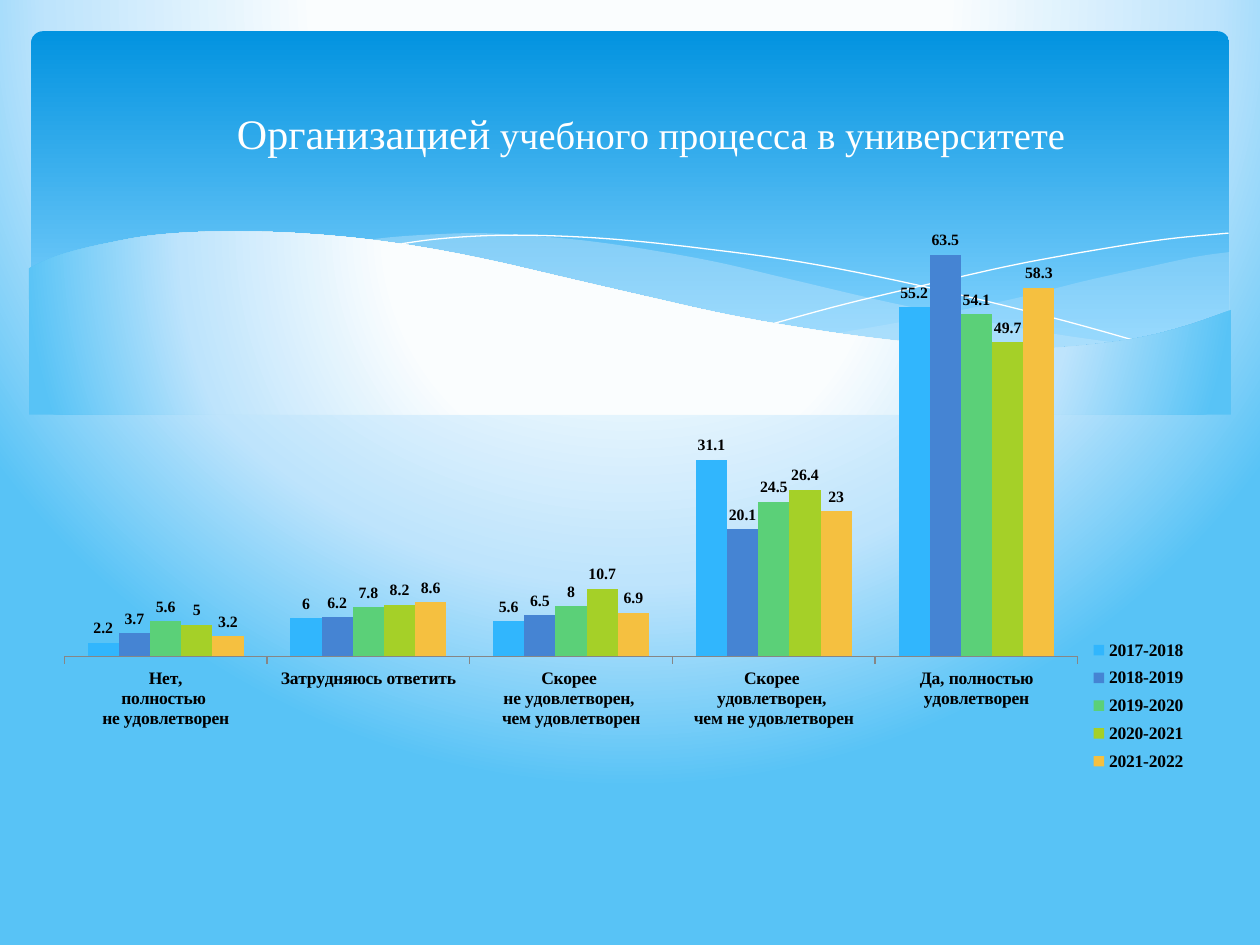
from dataclasses import dataclass
from typing import Optional

import pptx
import pptx.chart.data
import pptx.dml.color
import pptx.enum.chart
import pptx.enum.shapes
import pptx.enum.text
import pptx.oxml
import pptx.oxml.ns
import pptx.util

Cm = pptx.util.Cm
Pt = pptx.util.Pt
qn = pptx.oxml.ns.qn
RGB = pptx.dml.color.RGBColor.from_string


@dataclass(frozen=True)
class Theme:
    face: str = "Times New Roman"
    base: str = "Cabin"
    white: str = "FFFFFF"
    black: str = "000000"
    axis: str = "868686"
    mist: str = "C6E7FC"
    band: tuple = ((0, "0293E0"), (90, "83D3FE"))
    sky: tuple = ((40, "FAFDFE"), (74, "BEE4FC"), (100, "58C3F6"))
    lead: int = 24
    rest: int = 22
    text: int = 10
    label: int = 9


@dataclass(frozen=True)
class Wave:
    curves: list
    alpha: Optional[int] = None
    line: bool = False


@dataclass(frozen=True)
class Year:
    name: str
    color: str
    vals: tuple


THEME = Theme()
LINEAR = '<a:lin ang="5400000" scaled="0"/>'
RADIAL = ('<a:path path="circle"><a:fillToRect l="20000" t="-40000" '
          'r="20000" b="140000"/></a:path>')

WAVES = [
    Wave([[(976, 200), (948, 204), (906, 213), (861, 223), (805, 237), (729, 253), (661, 265)],
          [(661, 265), (705, 271), (757, 276), (803, 278), (854, 276), (897, 270),
           (942, 259), (976, 247)]], alpha=29),
    Wave([[(893, 273), (837, 265), (775, 254), (706, 240), (629, 222), (569, 208), (514, 198),
           (465, 191), (420, 187), (380, 185), (344, 186), (313, 188), (286, 191)],
          [(286, 191), (342, 199), (404, 211), (449, 222), (530, 240), (601, 255), (665, 266),
           (722, 274), (773, 277), (818, 278), (857, 277), (893, 273)]], alpha=40),
    Wave([[(309, 195), (344, 190), (387, 187), (433, 187), (489, 190), (556, 197), (636, 208),
           (727, 226), (831, 251), (907, 272)]], line=True),
    Wave([[(613, 257), (672, 241), (748, 223), (806, 210), (866, 199), (924, 190),
           (975, 185)]], line=True),
    Wave([[(977, 246), (940, 259), (899, 269), (850, 275), (809, 277), (761, 275), (708, 270),
           (648, 262), (579, 250), (503, 233), (447, 220), (391, 207), (340, 197), (292, 190),
           (250, 186), (211, 184), (161, 184), (119, 187), (85, 193), (59, 199), (40, 205),
           (23, 213)],
          [(23, 213), (23, 329)], [(23, 329), (977, 329)], [(977, 329), (977, 246)]]),
]

CATS = ["Нет,\nполностью \nне удовлетворен", "Затрудняюсь ответить",
        "Скорее \nне удовлетворен, \nчем удовлетворен",
        "Скорее \nудовлетворен, \nчем не удовлетворен", "Да, полностью удовлетворен"]
YEARS = [
    Year("2017-2018", "31B6FD", (2.2, 6, 5.6, 31.1, 55.2)),
    Year("2018-2019", "4584D3", (3.7, 6.2, 6.5, 20.1, 63.5)),
    Year("2019-2020", "5BD078", (5.6, 7.8, 8, 24.5, 54.1)),
    Year("2020-2021", "A5D028", (5, 8.2, 10.7, 26.4, 49.7)),
    Year("2021-2022", "F5C040", (3.2, 8.6, 6.9, 23, 58.3)),
]


def shade(fill, props, stops: tuple, kind: str) -> None:
    fill.gradient()
    marks = "".join(f'<a:gs pos="{pos * 1000}"><a:srgbClr val="{tint}"/></a:gs>'
                    for pos, tint in stops)
    grad = pptx.oxml.parse_xml(
        f'<a:gradFill {pptx.oxml.ns.nsdecls("a")} rotWithShape="1">'
        f'<a:gsLst>{marks}</a:gsLst>{kind}</a:gradFill>')
    props.replace(props.find(qn("a:gradFill")), grad)


def smooth(knots: list, steps: int = 6) -> list:
    ends = [knots[0], *knots, knots[-1]]
    dots = [knots[0]]
    for a, b, c, d in zip(ends, ends[1:], ends[2:], ends[3:]):
        for step in range(1, steps + 1):
            t = step / steps
            dots.append(tuple(
                q + t * (r - p) / 2 + t * t * (2 * p - 5 * q + 4 * r - s) / 2
                + t ** 3 * (3 * q - p - 3 * r + s) / 2
                for p, q, r, s in zip(a, b, c, d)))
    return dots


def draw_wave(slide, wave: Wave) -> None:
    dots = [(Cm(x * 0.0254), Cm(y * 0.0254))
            for curve in wave.curves for x, y in smooth(curve)]
    pen = slide.shapes.build_freeform(*dots[0])
    pen.add_line_segments(dots[1:], close=not wave.line)
    shape = pen.convert_to_shape()
    shape.shadow.inherit = False
    if wave.line:
        shape.fill.background()
        shape.line.color.rgb = RGB(THEME.white)
        shape.line.width = Pt(0)
        return
    shape.line.fill.background()
    if wave.alpha is None:
        shade(shape.fill, shape.element.spPr, THEME.sky, RADIAL)
        return
    shape.fill.solid()
    shape.fill.fore_color.rgb = RGB(THEME.mist)
    tint = shape.element.spPr.find(qn("a:solidFill"))[0]
    tint.makeelement(qn("a:alpha"), {})
    alpha = pptx.oxml.parse_xml(
        f'<a:alpha {pptx.oxml.ns.nsdecls("a")} val="{wave.alpha * 1000}"/>')
    tint.append(alpha)


def draw_band(slide) -> None:
    band = slide.shapes.add_shape(pptx.enum.shapes.MSO_SHAPE.ROUNDED_RECTANGLE,
                                  Cm(0.63), Cm(0.63), Cm(24.15), Cm(6.86))
    band.adjustments[0] = 0.034
    band.shadow.inherit = False
    band.line.fill.background()
    shade(band.fill, band.element.spPr, THEME.band, LINEAR)


def draw_title(slide) -> None:
    title = slide.shapes.title
    slide.shapes.element.append(title.element)
    title.left, title.top, title.width, title.height = Cm(1.27), Cm(0.94), Cm(22.86), Cm(3.48)
    frame = title.text_frame
    frame.word_wrap = True
    frame.auto_size = pptx.enum.text.MSO_AUTO_SIZE.NONE
    frame.vertical_anchor = pptx.enum.text.MSO_ANCHOR.MIDDLE
    frame.margin_left = Cm(1.1)
    para = frame.paragraphs[0]
    para.alignment = pptx.enum.text.PP_ALIGN.CENTER
    for text, size in (("Организацией", THEME.lead),
                       (" учебного процесса в университете", THEME.rest)):
        run = para.add_run()
        run.text = text
        run.font.name = THEME.face
        run.font.size = Pt(size)
        run.font.color.rgb = RGB(THEME.white)


def set_font(font, size: int, face: str, bold: bool) -> None:
    font.name, font.size, font.bold = face, Pt(size), bold
    font.color.rgb = RGB(THEME.black)


def layout(box: tuple, inner: bool = False):
    target = '<c:layoutTarget val="inner"/>' if inner else ""
    modes = '<c:xMode val="edge"/><c:yMode val="edge"/>'
    sides = "".join(f'<c:{key} val="{val}"/>' for key, val in zip("xywh", box))
    return pptx.oxml.parse_xml(
        f'<c:layout {pptx.oxml.ns.nsdecls("c")}><c:manualLayout>'
        f'{target}{modes}{sides}</c:manualLayout></c:layout>')


def draw_chart(slide) -> None:
    enum = pptx.enum.chart
    data = pptx.chart.data.CategoryChartData()
    data.categories = CATS
    for year in YEARS:
        data.add_series(year.name, year.vals)
    chart = slide.shapes.add_chart(enum.XL_CHART_TYPE.COLUMN_CLUSTERED, Cm(1.09), Cm(3.73),
                                   Cm(23.01), Cm(12.88), data).chart
    set_font(chart.font, THEME.text, THEME.base, False)
    chart.has_title = False
    plot = chart.plots[0]
    plot.gap_width, plot.overlap, plot.vary_by_categories = 150, 0, False
    for bars, year in zip(plot.series, YEARS):
        bars.format.fill.solid()
        bars.format.fill.fore_color.rgb = RGB(year.color)
        labels = bars.data_labels
        labels.show_value = True
        labels.position = enum.XL_LABEL_POSITION.OUTSIDE_END
        set_font(labels.font, THEME.label, THEME.face, True)
    axis = chart.category_axis
    axis.major_tick_mark = enum.XL_TICK_MARK.OUTSIDE
    axis.format.line.color.rgb = RGB(THEME.axis)
    set_font(axis.tick_labels.font, THEME.text, THEME.face, True)
    scale = chart.value_axis
    scale.minimum_scale, scale.maximum_scale = 0, 70
    scale.has_major_gridlines = False
    scale.visible = False
    chart.has_legend = True
    legend = chart.legend
    legend.position = enum.XL_LEGEND_POSITION.RIGHT
    legend.include_in_layout = False
    set_font(legend.font, THEME.text, THEME.face, True)
    root = chart.element
    for tag in ("c:plotArea", "c:legend"):
        area = root.find(".//" + qn(tag))
        for old in area.findall(qn("c:layout")):
            area.remove(old)
    root.find(".//" + qn("c:plotArea")).insert(0, layout((0.009, 0.045, 0.888, 0.693), True))
    root.find(".//" + qn("c:legendPos")).addnext(layout((0.9, 0.7, 0.1, 0.23)))


def main() -> None:
    deck = pptx.Presentation()
    deck.slide_width, deck.slide_height = Cm(25.4), Cm(19.05)
    slide = deck.slides.add_slide(deck.slide_layouts[5])
    fill = slide.background.fill
    fill.solid()
    shade(fill, slide.element.find(".//" + qn("p:bgPr")), THEME.sky, RADIAL)
    draw_band(slide)
    for wave in WAVES:
        draw_wave(slide, wave)
    draw_title(slide)
    draw_chart(slide)
    deck.save("out.pptx")


if __name__ == "__main__":
    main()
